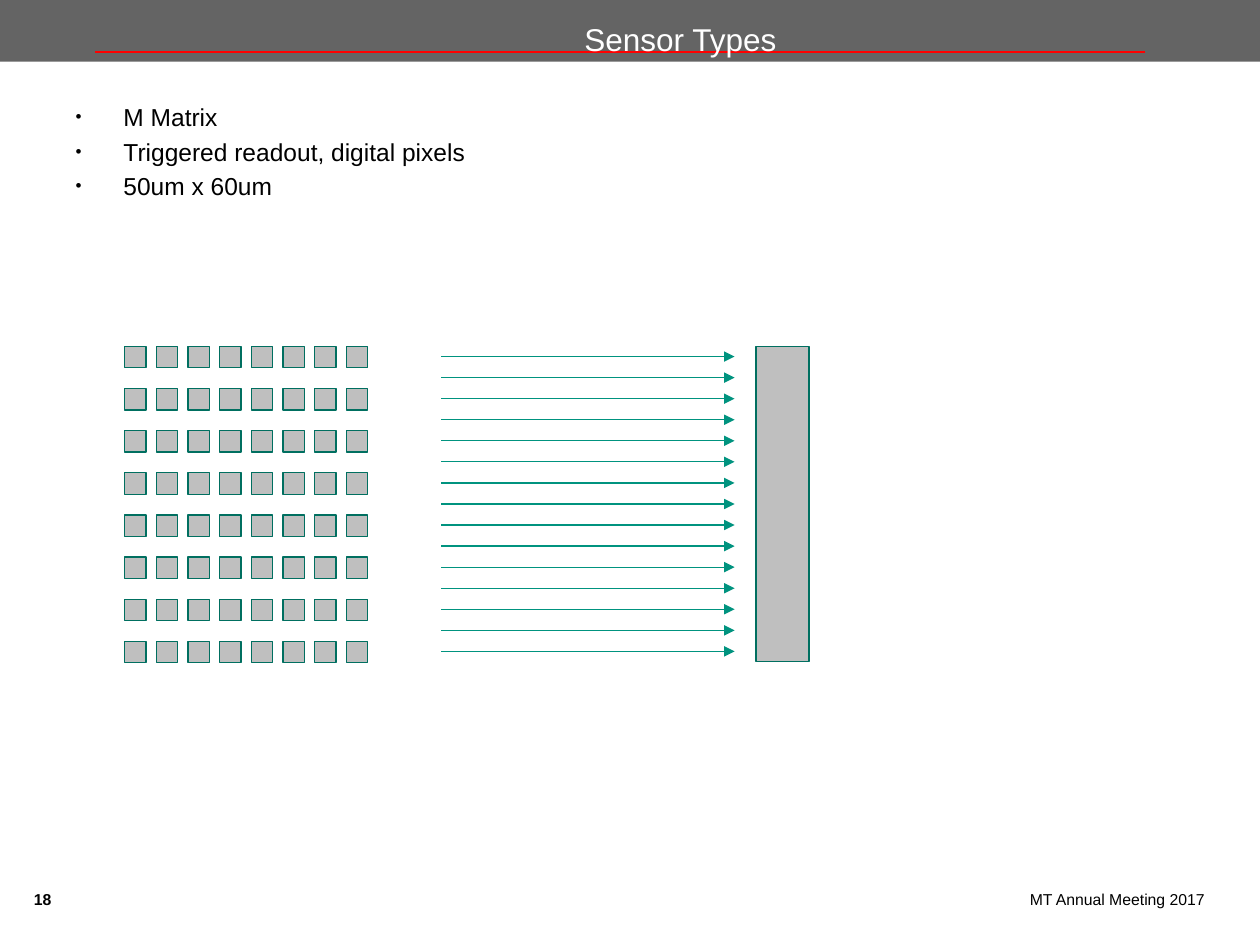
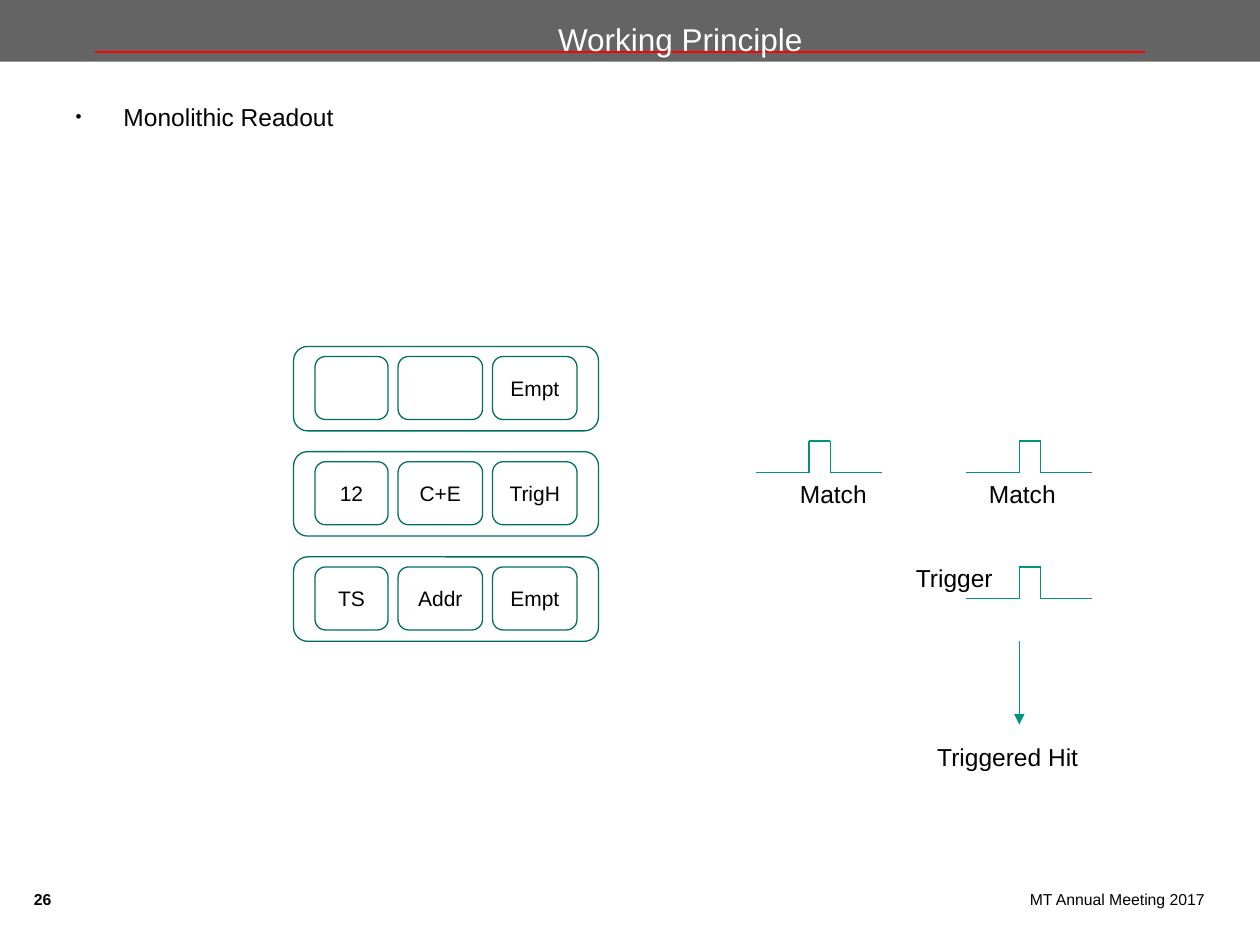
from dataclasses import dataclass
from itertools import pairwise

from lxml import etree
from pptx import Presentation
from pptx.dml.color import RGBColor
from pptx.enum import shapes, text
from pptx.oxml import ns
from pptx.util import Inches, Pt


@dataclass(frozen=True)
class Theme:
    """Colours, typeface and type sizes shared by the slides."""

    font: str = "Arial"
    ink: str = "000000"
    band: str = "646464"
    title: str = "FFFFFF"
    rule: str = "FF0000"
    sensor: str = "BFBFBF"
    outline: str = "006F60"
    signal: str = "00937F"
    title_size: float = 18
    body_size: float = 14
    cell_size: float = 12
    footer_size: float = 9
    thin: float = 0.75


THEME = Theme()
MEETING = "MT Annual Meeting 2017"
PULSE = [(0, 0.25), (0.42, 0.25), (0.42, 0), (0.59, 0), (0.59, 0.25), (1, 0.25)]
CELL_COLUMNS = [(2.5, 0.58), (3.16, 0.67), (3.91, 0.67)]
CELL_ROWS = [("", "", "Empt"), ("12", "C+E", "TrigH"), ("TS", "Addr", "Empt")]


def spread(first, last, count):
    """Return evenly spaced positions from first to last."""
    return [first + (last - first) * i / (count - 1) for i in range(count)]


def style(paragraph, size, color=THEME.ink, bold=False, align=None):
    """Format the runs of a paragraph."""
    paragraph.alignment = align
    for run in paragraph.runs:
        run.font.name = THEME.font
        run.font.size = Pt(size)
        run.font.bold = bold
        run.font.color.rgb = RGBColor.from_string(color)


def place(element, left, top, width, height):
    """Move and size a placeholder."""
    element.left, element.top = Inches(left), Inches(top)
    element.width, element.height = Inches(width), Inches(height)


def add_box(slide, kind, left, top, width, height, fill=None, outline=THEME.outline):
    """Add a flat preset shape."""
    box = slide.shapes.add_shape(
        kind, Inches(left), Inches(top), Inches(width), Inches(height))
    box.shadow.inherit = False
    if fill:
        box.fill.solid()
        box.fill.fore_color.rgb = RGBColor.from_string(fill)
    else:
        box.fill.background()
    if outline:
        box.line.color.rgb = RGBColor.from_string(outline)
        box.line.width = Pt(THEME.thin)
    else:
        box.line.fill.background()
    return box


def add_line(slide, start, end, color=THEME.signal, width=THEME.thin, arrow=False):
    """Add a straight line, with an arrowhead at its end if asked."""
    line = slide.shapes.add_connector(
        shapes.MSO_CONNECTOR.STRAIGHT, *(Inches(v) for v in (*start, *end)))
    line.line.color.rgb = RGBColor.from_string(color)
    line.line.width = Pt(width)
    properties = line.element.spPr
    if arrow:
        stroke = properties.find(ns.qn("a:ln"))
        etree.SubElement(stroke, ns.qn("a:tailEnd"), type="triangle")
    etree.SubElement(properties, ns.qn("a:effectLst"))


def clear_insets(frame):
    """Remove the inner margins of a text frame."""
    frame.margin_left = frame.margin_right = 0
    frame.margin_top = frame.margin_bottom = 0


def add_footer(slide, wording, left, width, height, **look):
    """Add a text without margins at the foot of the slide."""
    frame = slide.shapes.add_textbox(
        Inches(left), Inches(7.06), Inches(width), Inches(height)).text_frame
    clear_insets(frame)
    frame.word_wrap = True
    frame.text = wording
    style(frame.paragraphs[0], THEME.footer_size, **look)


def add_label(slide, wording, left, top, width):
    """Add a one-line label that fits its text."""
    frame = slide.shapes.add_textbox(
        Inches(left), Inches(top), Inches(width), Inches(0.34)).text_frame
    frame.word_wrap = False
    frame.auto_size = text.MSO_AUTO_SIZE.SHAPE_TO_FIT_TEXT
    frame.text = wording
    style(frame.paragraphs[0], THEME.body_size)


def add_bullet(paragraph):
    """Give a paragraph a hanging bullet at 70 percent size."""
    properties = paragraph._p.get_or_add_pPr()
    properties.set("marL", str(Inches(0.38)))
    properties.set("indent", str(Inches(-0.38)))
    etree.SubElement(properties, ns.qn("a:buSzPct"), val="70000")
    etree.SubElement(properties, ns.qn("a:buChar"), char="•")


def add_frame(slide, number):
    """Draw the title band, the rule and the footers."""
    add_footer(slide, MEETING, 6.57, 2.99, 0.39, align=text.PP_ALIGN.RIGHT)
    add_footer(slide, number, 0.27, 0.36, 0.24, bold=True)
    add_box(slide, shapes.MSO_SHAPE.RECTANGLE, 0, 0, 10, 0.49, THEME.band, None)
    add_line(slide, (9.09, 0.41), (0.75, 0.41), THEME.rule, 1)


def add_slide(prs, number, heading, points):
    """Add a framed slide with its title and bullet list."""
    slide = prs.slides.add_slide(prs.slide_layouts[1])
    add_frame(slide, number)
    title, body = slide.shapes.title, slide.placeholders[1]
    slide.shapes.element.extend([title.element, body.element])

    place(title, 1.3, 0.12, 8.2, 0.38)
    title.text_frame.text = heading
    title.text_frame.auto_size = text.MSO_AUTO_SIZE.NONE
    title.text_frame.vertical_anchor = text.MSO_ANCHOR.MIDDLE
    style(title.text_frame.paragraphs[0], THEME.title_size, THEME.title,
          align=text.PP_ALIGN.CENTER)

    place(body, 0.5, 0.76, 9, 0.41)
    body.text_frame.text = "\n".join(points)
    body.text_frame.auto_size = text.MSO_AUTO_SIZE.NONE
    for i, point in enumerate(body.text_frame.paragraphs):
        add_bullet(point)
        point.space_before = Pt(3 if i else 0)
        style(point, THEME.body_size)
    return slide


def add_pixel_matrix(slide):
    """Draw the pixels, their readout lines and the readout column."""
    square = shapes.MSO_SHAPE.RECTANGLE
    for top in spread(2.75, 5.09, 8):
        for left in spread(0.99, 2.75, 8):
            add_box(slide, square, left, top, 0.17, 0.17, THEME.sensor)
    for y in spread(2.83, 5.17, 15):
        add_line(slide, (3.5, y), (5.83, y), arrow=True)
    add_box(slide, square, 6, 2.75, 0.42, 2.5, THEME.sensor)


def add_hit_buffers(slide):
    """Draw the rows of buffer cells."""
    rounded = shapes.MSO_SHAPE.ROUNDED_RECTANGLE
    for top, entries in zip(spread(2.75, 4.42, 3), CELL_ROWS):
        add_box(slide, rounded, 2.33, top, 2.42, 0.67)
        for (left, width), entry in zip(CELL_COLUMNS, entries):
            cell = add_box(slide, rounded, left, top + 0.08, width, 0.5)
            if entry:
                frame = cell.text_frame
                clear_insets(frame)
                frame.word_wrap = False
                frame.vertical_anchor = text.MSO_ANCHOR.MIDDLE
                frame.text = entry
                style(frame.paragraphs[0], THEME.cell_size,
                      align=text.PP_ALIGN.CENTER)


def add_pulse(slide, left, top):
    """Draw one square signal pulse."""
    corners = [(left + x, top + y) for x, y in PULSE]
    for start, end in pairwise(corners):
        add_line(slide, start, end)


def add_trigger_signals(slide):
    """Draw the match and trigger pulses that lead to a triggered hit."""
    for left, top in [(6, 3.5), (7.67, 3.5), (7.67, 4.5)]:
        add_pulse(slide, left, top)
    add_label(slide, "Match", 6.25, 3.75, 0.73)
    add_label(slide, "Match", 7.75, 3.75, 0.73)
    add_label(slide, "Trigger", 7.17, 4.42, 0.81)
    add_line(slide, (8.09, 5.09), (8.09, 5.75), arrow=True)
    add_label(slide, "Triggered Hit", 7.34, 5.84, 1.33)


def main():
    """Build both slides and save the presentation."""
    prs = Presentation()
    prs.slide_width, prs.slide_height = Inches(10), Inches(7.5)

    sensor_types = add_slide(
        prs, "18", "Sensor Types",
        ["M Matrix", "Triggered readout, digital pixels", "50um x 60um"])
    add_pixel_matrix(sensor_types)

    working_principle = add_slide(
        prs, "26", "Working Principle", ["Monolithic Readout"])
    add_hit_buffers(working_principle)
    add_trigger_signals(working_principle)

    prs.save("out.pptx")


if __name__ == "__main__":
    main()
